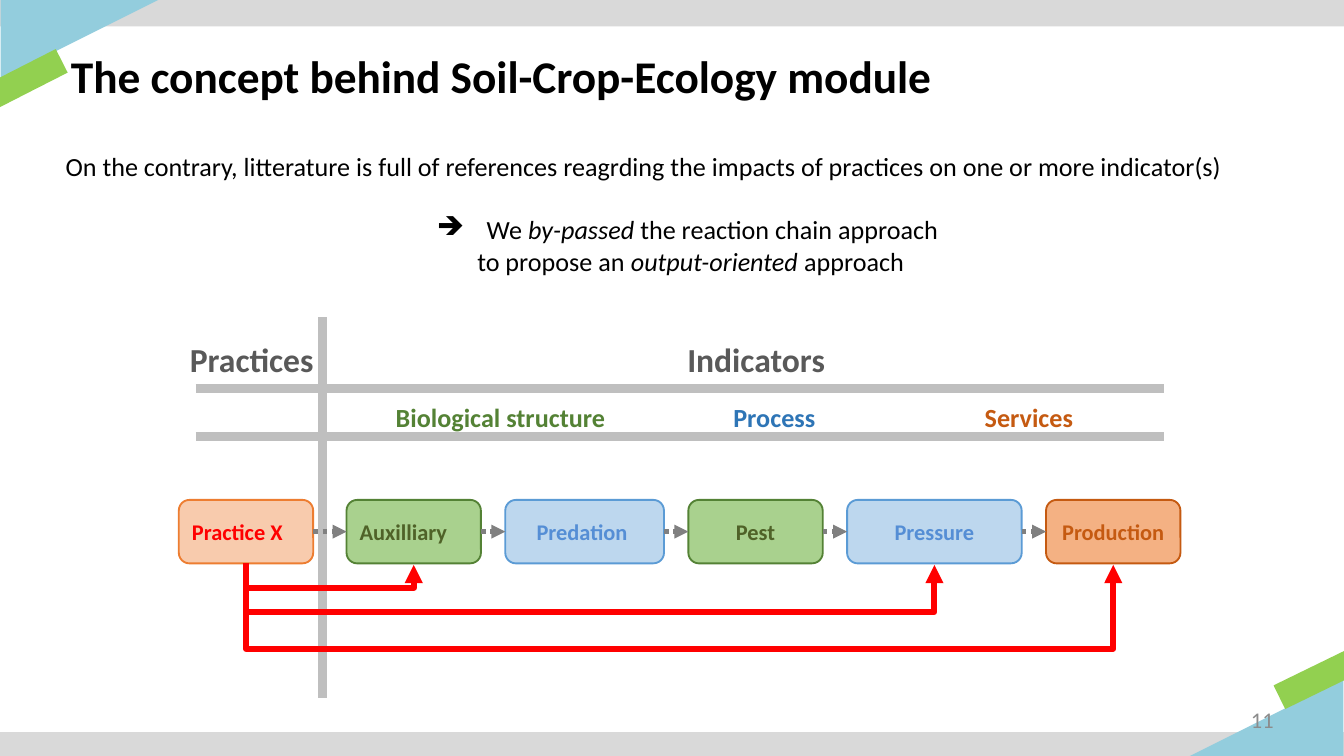
from lxml import etree
from pptx import Presentation
from pptx.dml.color import RGBColor
from pptx.enum.dml import MSO_LINE
from pptx.enum.shapes import MSO_CONNECTOR, MSO_SHAPE
from pptx.enum.text import MSO_ANCHOR, PP_ALIGN
from pptx.oxml.ns import qn
from pptx.util import Cm, Pt

RECT, ROUNDED, TRIANGLE = (
    MSO_SHAPE.RECTANGLE, MSO_SHAPE.ROUNDED_RECTANGLE, MSO_SHAPE.ISOSCELES_TRIANGLE)
STRAIGHT, ELBOW = MSO_CONNECTOR.STRAIGHT, MSO_CONNECTOR.ELBOW
LEFT, CENTER, RIGHT = PP_ALIGN.LEFT, PP_ALIGN.CENTER, PP_ALIGN.RIGHT
TOP, MIDDLE = MSO_ANCHOR.TOP, MSO_ANCHOR.MIDDLE
DOTTED = MSO_LINE.ROUND_DOT

BLACK = RGBColor(0x00, 0x00, 0x00)
RED = RGBColor(0xFF, 0x00, 0x00)
BAND_GRAY = RGBColor(0xD9, 0xD9, 0xD9)
RULE_GRAY = RGBColor(0xBF, 0xBF, 0xBF)
ARROW_GRAY = RGBColor(0x80, 0x80, 0x80)
NUMBER_GRAY = RGBColor(0x8C, 0x8C, 0x8C)
HEADING_GRAY = RGBColor(0x59, 0x59, 0x59)
CORNER_BLUE = RGBColor(0x93, 0xCD, 0xDD)
CORNER_GREEN = RGBColor(0x92, 0xD0, 0x50)
GREEN = RGBColor(0x54, 0x82, 0x35)
LIGHT_GREEN = RGBColor(0xA9, 0xD1, 0x8E)
DARK_GREEN = RGBColor(0x4F, 0x62, 0x28)
PROCESS_BLUE = RGBColor(0x2E, 0x75, 0xB6)
LINE_BLUE = RGBColor(0x5B, 0x9B, 0xD5)
LIGHT_BLUE = RGBColor(0xBD, 0xD7, 0xEE)
TEXT_BLUE = RGBColor(0x55, 0x8E, 0xD5)
RUST = RGBColor(0xC5, 0x5A, 0x11)
ORANGE = RGBColor(0xED, 0x7D, 0x31)
PEACH = RGBColor(0xF8, 0xCB, 0xAD)
LIGHT_RUST = RGBColor(0xF4, 0xB1, 0x83)

BOX_TOP, BOX_HEIGHT, BOX_GAP = 9.45, 1.2, 0.46
# label, width, gap before, fill, outline, text colour, alignment
CHAIN = [
    ("Practice X", 2.54, 0, PEACH, ORANGE, RED, LEFT),
    ("Auxilliary", 2.54, 0.63, LIGHT_GREEN, GREEN, DARK_GREEN, LEFT),
    ("Predation ", 3, BOX_GAP, LIGHT_BLUE, LINE_BLUE, TEXT_BLUE, CENTER),
    ("Pest", 2.54, BOX_GAP, LIGHT_GREEN, GREEN, DARK_GREEN, CENTER),
    ("Pressure", 3.3, BOX_GAP, LIGHT_BLUE, LINE_BLUE, TEXT_BLUE, CENTER),
    ("Production", 2.54, BOX_GAP, LIGHT_RUST, RUST, RUST, CENTER),
]
# Index of the reached box and depth of the bypass below the chain
BYPASSES = [(1, 0.46), (4, 0.92), (5, 1.61)]
# label, left, top, width, height, size, colour
HEADINGS = [
    ("Practices", 3.4, 6.3, 2.74, 0.97, 18, HEADING_GRAY),
    ("Indicators", 12.8, 6.3, 3.02, 0.97, 18, HEADING_GRAY),
    ("Biological structure", 7.29, 7.49, 4.39, 0.79, 14, GREEN),
    ("Process", 13.67, 7.49, 1.96, 0.79, 14, PROCESS_BLUE),
    ("Services", 18.42, 7.49, 2.11, 0.79, 14, RUST),
]


def add_span(para, text, size, color, bold=False, italic=False):
    span = para.add_run()
    span.text = text
    font = span.font
    font.name, font.size, font.bold, font.italic = "Calibri", Pt(size), bold, italic
    font.color.rgb = color


def set_frame(frame, anchor, wrap, side=0.19, edge=0.1):
    frame.vertical_anchor, frame.word_wrap = anchor, wrap
    frame.margin_left = frame.margin_right = Cm(side)
    frame.margin_top = frame.margin_bottom = Cm(edge)


def add_filled(page, kind, left, top, width, height, fill, outline=None, rotation=0):
    shape = page.shapes.add_shape(kind, Cm(left), Cm(top), Cm(width), Cm(height))
    shape.shadow.inherit = False
    shape.rotation = rotation
    shape.fill.solid()
    shape.fill.fore_color.rgb = fill
    if outline is None:
        shape.line.fill.background()
    else:
        shape.line.color.rgb = outline
        shape.line.width = Pt(1)
    return shape


def add_text(page, left, top, width, height, anchor=TOP, wrap=False, side=0.19, edge=0.1):
    box = page.shapes.add_textbox(Cm(left), Cm(top), Cm(width), Cm(height))
    set_frame(box.text_frame, anchor, wrap, side, edge)
    return box.text_frame


def add_line(page, kind, x1, y1, x2, y2, color, width, dash=None, arrow=False):
    line = page.shapes.add_connector(kind, Cm(x1), Cm(y1), Cm(x2), Cm(y2))
    line.line.color.rgb = color
    line.line.width = Pt(width)
    if dash is not None:
        line.line.dash_style = dash
    properties = line._element.spPr
    if arrow:
        etree.SubElement(properties.find(qn("a:ln")), qn("a:tailEnd"), type="triangle")
    etree.SubElement(properties, qn("a:effectLst"))
    return line


def add_bypass(page, start_x, end_x, depth):
    """Elbow that leaves downwards, runs across and comes back up."""
    stub = 0.03
    span = end_x - start_x
    middle_x = (start_x + end_x) / 2
    middle_y = BOX_TOP + BOX_HEIGHT + stub / 2
    # The unrotated frame is narrow and tall; a quarter turn lays it flat
    line = add_line(page, ELBOW, middle_x + stub / 2, middle_y - span / 2,
                    middle_x - stub / 2, middle_y + span / 2, RED, 3.25, arrow=True)
    properties = line._element.spPr
    properties.find(qn("a:xfrm")).set("rot", str(270 * 60000))
    geometry = properties.find(qn("a:prstGeom"))
    adjustments = geometry.find(qn("a:avLst"))
    if adjustments is None:
        adjustments = etree.SubElement(geometry, qn("a:avLst"))
    etree.SubElement(adjustments, qn("a:gd"), name="adj1",
                     fmla=f"val {round(depth / stub * 100000)}")


def add_decor(page):
    for top, left, triangle_top, turn in ((0, 0.76, -0.76, 90), (13.84, 23.14, 12.09, 270)):
        add_filled(page, RECT, 0, top, 25.4, 0.5, BAND_GRAY)
        corner = add_filled(page, TRIANGLE, left, triangle_top, 1.5, 3, CORNER_BLUE,
                            rotation=turn)
        corner.adjustments[0] = 0
    for left, top, turn in ((-0.25, 1.24, 333), (24.1, 12.6, 154)):
        add_filled(page, RECT, left, top, 1.5, 0.5, CORNER_GREEN, rotation=turn)


def add_title(page):
    title = page.shapes.title
    title.left, title.top, title.width, title.height = Cm(1.09), Cm(0.76), Cm(23.16), Cm(1.32)
    set_frame(title.text_frame, MIDDLE, True, 0.25, 0.13)
    para = title.text_frame.paragraphs[0]
    para.alignment = LEFT
    add_span(para, "The concept behind Soil-Crop-Ecology module", 24.3, BLACK, bold=True)


def add_body(page):
    frame = add_text(page, 0.99, 2.72, 24.13, 9.96, wrap=True, side=0.25, edge=0.13)
    add_span(frame.paragraphs[0], "On the contrary, litterature is full of references reagrding "
             "the impacts of practices on one or more indicator(s)", 14, BLACK)
    # Each conclusion line has its middle words in italics
    conclusions = [("We ", "by-passed", " the reaction chain approach "),
                   ("to propose an ", "output-oriented ", "approach")]
    for words in conclusions:
        para = frame.add_paragraph()
        para.alignment = CENTER
        for index, text in enumerate(words):
            add_span(para, text, 14, BLACK, italic=index == 1)
    arrow_para = frame.paragraphs[1]
    arrow_para.space_before = Pt(17)
    settings = arrow_para._p.get_or_add_pPr()
    settings.set("marL", str(Cm(0.94)))
    settings.set("indent", str(-Cm(0.94)))
    etree.SubElement(settings, qn("a:buChar"), char="➔")


def add_table_rules(page):
    for y in (7.34, 8.25):
        add_line(page, STRAIGHT, 3.7, y, 22, y, RULE_GRAY, 5)
    add_line(page, STRAIGHT, 6.1, 6, 6.1, 13.2, RULE_GRAY, 5)
    for label, left, top, width, height, size, color in HEADINGS:
        frame = add_text(page, left, top, width, height)
        add_span(frame.paragraphs[0], label, size, color, bold=True)


def add_chain(page):
    left = 3.38
    boxes, centers = [], []
    for label, width, gap, fill, outline, color, alignment in CHAIN:
        left += gap
        box = add_filled(page, ROUNDED, left, BOX_TOP, width, BOX_HEIGHT, fill, outline)
        set_frame(box.text_frame, MIDDLE, True)
        para = box.text_frame.paragraphs[0]
        para.alignment = alignment
        add_span(para, label, 12, color, bold=True)
        boxes.append(box)
        centers.append(left + width / 2)
        left += width
    # Dotted reaction chain
    for source, target in zip(boxes, boxes[1:]):
        arrow = add_line(page, STRAIGHT, 0, 0, 1, 0, ARROW_GRAY, 2.5, DOTTED, arrow=True)
        arrow.begin_connect(source, 3)
        arrow.end_connect(target, 1)
    # Direct effects of the practice
    for target, depth in BYPASSES:
        add_bypass(page, centers[0], centers[target], depth)


def main():
    deck = Presentation()
    deck.slide_width, deck.slide_height = Cm(25.4), Cm(14.29)
    page = deck.slides.add_slide(deck.slide_layouts[5])
    add_decor(page)
    add_title(page)
    add_body(page)
    add_table_rules(page)
    add_chain(page)
    # Page number
    number = add_text(page, 22.71, 13.23, 1.55, 0.76, MIDDLE, wrap=True).paragraphs[0]
    number.alignment = RIGHT
    add_span(number, "11", 12, NUMBER_GRAY)
    deck.save("out.pptx")


if __name__ == "__main__":
    main()
